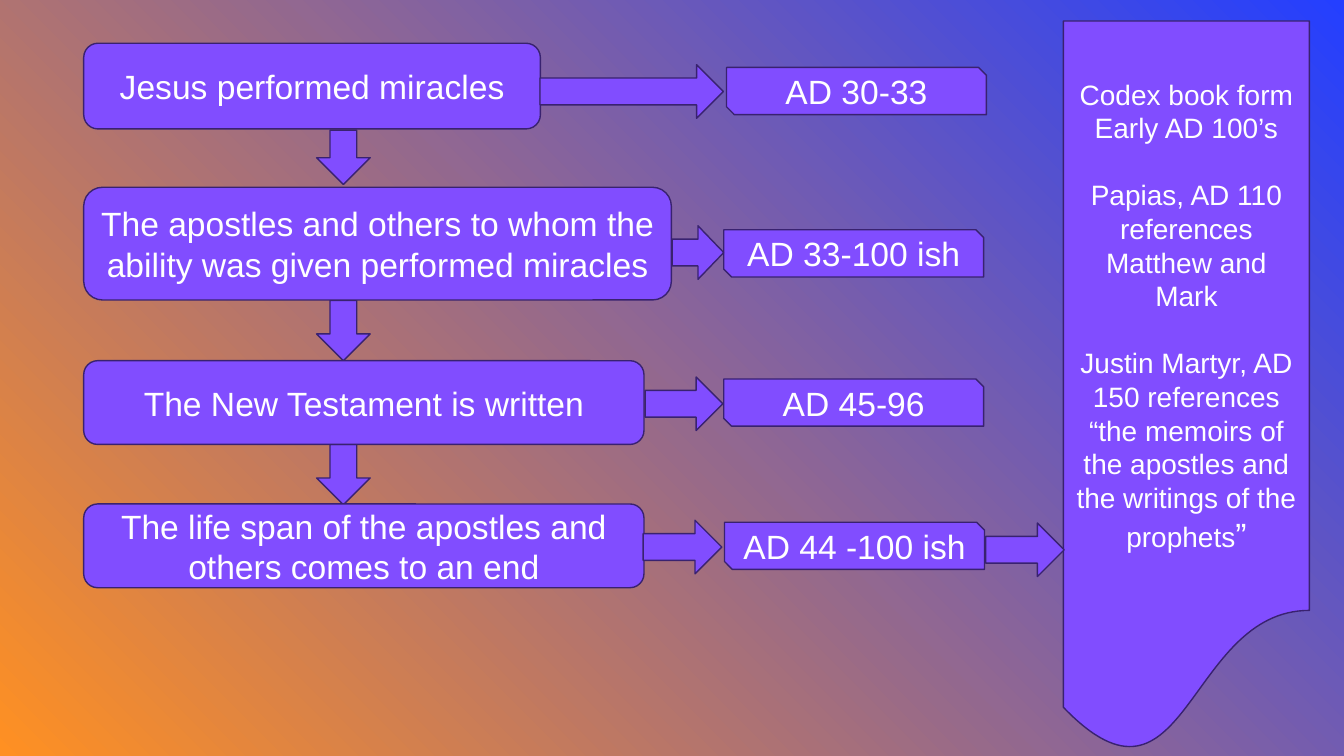
from dataclasses import dataclass

from pptx import Presentation
from pptx.dml.color import RGBColor
from pptx.enum.shapes import MSO_SHAPE
from pptx.enum.text import MSO_ANCHOR, PP_ALIGN
from pptx.shapes.autoshape import Shape
from pptx.slide import Slide
from pptx.util import Cm, Pt

EVENT = MSO_SHAPE.ROUNDED_RECTANGLE
DATE = MSO_SHAPE.SNIP_2_DIAG_RECTANGLE
DOWN = MSO_SHAPE.DOWN_ARROW
RIGHT = MSO_SHAPE.RIGHT_ARROW
DOCUMENT = MSO_SHAPE.FLOWCHART_DOCUMENT
CENTER = PP_ALIGN.CENTER
MIDDLE = MSO_ANCHOR.MIDDLE

FONT = "Arial"
PURPLE, OUTLINE, WHITE = "814DFF", "392270", "FFFFFF"
BLUE, ORANGE = "243FFF", "FF9022"
BLANK_LAYOUT = 6

# Shared measures in centimetres
EVENT_LEFT = 2.11
DOWN_LEFT = 7.98
ARROW_BREADTH = 1.35
DATE_WIDTH, DATE_HEIGHT = 6.55, 1.19


@dataclass
class Box:
    left: float
    top: float
    width: float
    height: float


@dataclass
class Step:
    event: str
    event_top: float
    event_width: float
    event_height: float
    date: str
    date_left: float
    date_top: float
    arrow: Box


@dataclass
class Note:
    text: str
    space_before: float = 0


STEPS = [
    Step("Jesus performed miracles", 1.09, 11.51, 2.16,
         "AD 30-33", 18.31, 1.70, Box(13.61, 1.63, 4.62, ARROW_BREADTH)),
    Step("The apostles and others to whom the ability was given performed miracles",
         4.72, 14.81, 2.84,
         "AD 33-100 ish", 18.24, 5.79, Box(16.94, 5.69, 1.30, ARROW_BREADTH)),
    Step("The New Testament is written", 9.09, 14.12, 2.11,
         "AD 45-96", 18.24, 9.55, Box(16.26, 9.50, 1.96, ARROW_BREADTH)),
    Step("The life span of the apostles and others comes to an end", 12.70, 14.12, 2.11,
         "AD 44 -100 ish", 18.26, 13.16, Box(16.21, 13.11, 1.98, ARROW_BREADTH)),
]
DOWN_ARROWS = [
    Box(DOWN_LEFT, top, ARROW_BREADTH, height)
    for top, height in ((3.28, 1.37), (7.57, 1.52), (11.20, 1.52))
]
NOTES = [
    Note("Codex book form"),
    Note("Early AD 100’s"),
    Note("Papias, AD 110 references Matthew and Mark", 24),
    Note("Justin Martyr, AD 150 references “the memoirs of the apostles "
         "and the writings of the prophets", 24),
]


def color(value: str) -> RGBColor:
    return RGBColor.from_string(value)


def add_shape(slide: Slide, kind: MSO_SHAPE, box: Box) -> Shape:
    shape = slide.shapes.add_shape(
        kind, Cm(box.left), Cm(box.top), Cm(box.width), Cm(box.height))
    shape.shadow.inherit = False
    shape.fill.solid()
    shape.fill.fore_color.rgb = color(PURPLE)
    shape.line.color.rgb = color(OUTLINE)
    shape.line.width = Pt(1)
    return shape


def write(shape: Shape, notes: list[Note], size: float) -> None:
    frame = shape.text_frame
    frame.word_wrap = True
    frame.vertical_anchor = MIDDLE
    for index, note in enumerate(notes):
        paragraph = frame.add_paragraph() if index else frame.paragraphs[0]
        paragraph.text = note.text
        paragraph.alignment = CENTER
        if note.space_before:
            paragraph.space_before = Pt(note.space_before)
        paragraph.font.name = FONT
        paragraph.font.size = Pt(size)
        paragraph.font.color.rgb = color(WHITE)


def paint_background(slide: Slide) -> None:
    fill = slide.background.fill
    fill.gradient()
    fill.gradient_angle = 225
    for stop, position, value in zip(fill.gradient_stops, (0, 1), (BLUE, ORANGE)):
        stop.position = position
        stop.color.rgb = color(value)


def add_step(slide: Slide, step: Step) -> None:
    event_box = Box(EVENT_LEFT, step.event_top, step.event_width, step.event_height)
    write(add_shape(slide, EVENT, event_box), [Note(step.event)], 24)
    date_box = Box(step.date_left, step.date_top, DATE_WIDTH, DATE_HEIGHT)
    write(add_shape(slide, DATE, date_box), [Note(step.date)], 24)
    add_shape(slide, RIGHT, step.arrow)


def add_sources(slide: Slide) -> None:
    document = add_shape(slide, DOCUMENT, Box(26.80, 0.53, 6.20, 18.52))
    write(document, NOTES, 20)
    closing_quote = document.text_frame.paragraphs[-1].add_run()
    closing_quote.text = "”"
    closing_quote.font.size = Pt(24)
    add_shape(slide, RIGHT, Box(24.84, 13.18, 1.98, ARROW_BREADTH))


def main() -> None:
    presentation = Presentation()
    presentation.slide_width, presentation.slide_height = Cm(33.87), Cm(19.05)
    slide = presentation.slides.add_slide(presentation.slide_layouts[BLANK_LAYOUT])
    paint_background(slide)

    # Timeline of events with their dates
    for arrow in DOWN_ARROWS:
        add_shape(slide, DOWN, arrow)
    for step in STEPS:
        add_step(slide, step)

    # Early written sources
    add_sources(slide)
    presentation.save("out.pptx")


if __name__ == "__main__":
    main()
